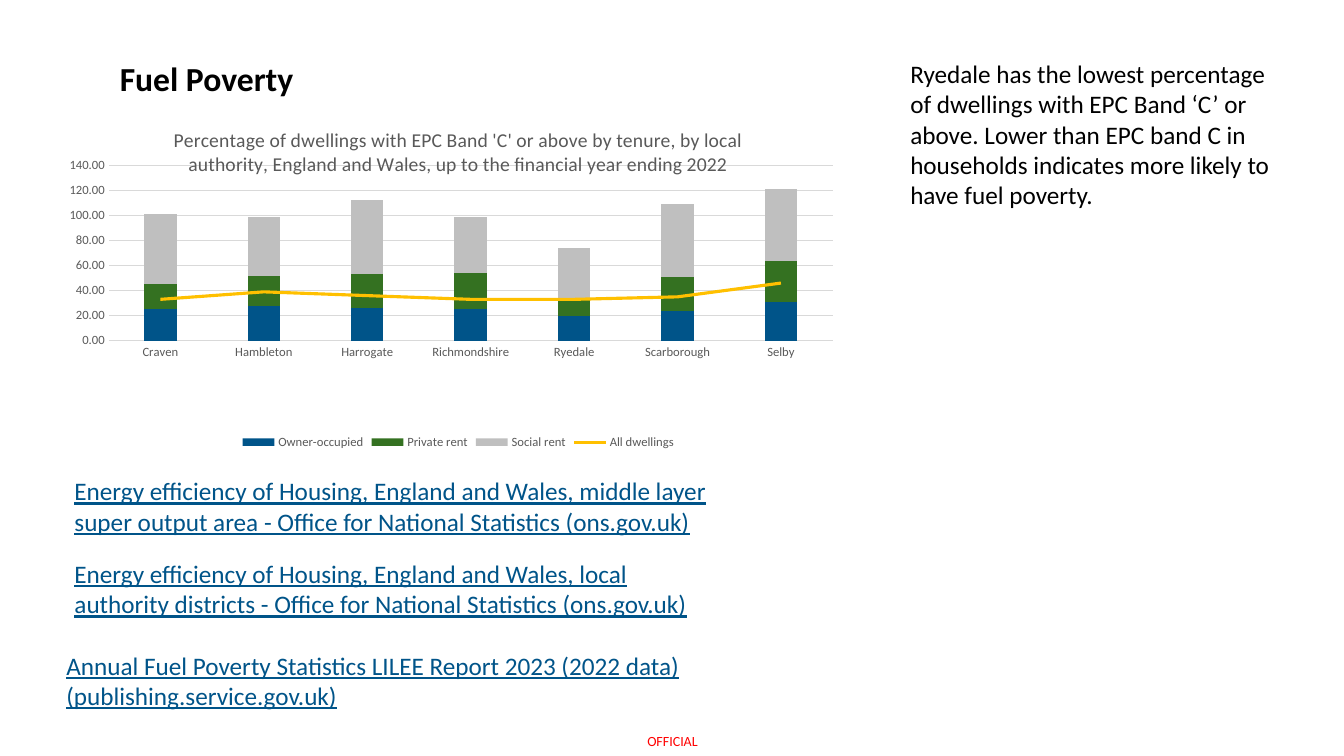
from dataclasses import dataclass

from pptx import Presentation
from pptx.chart.data import CategoryChartData
from pptx.dml.color import RGBColor
from pptx.enum.chart import XL_CHART_TYPE as ChartType, XL_LEGEND_POSITION as LegendPosition
from pptx.enum.chart import XL_MARKER_STYLE as MarkerStyle, XL_TICK_MARK as TickMark
from pptx.enum.text import MSO_ANCHOR as Anchor, PP_ALIGN as Align
from pptx.oxml import parse_xml
from pptx.oxml.ns import nsdecls, qn
from pptx.util import Inches, Pt


@dataclass(frozen=True)
class Theme:
    font: str = "Calibri"
    ink: str = "000000"
    link: str = "005489"
    marking: str = "FF0000"
    label: str = "595959"
    grid: str = "D9D9D9"
    bars: tuple = ("005489", "347121", "BFBFBF")
    average: str = "FFC000"
    heading_size: float = 24
    body_size: float = 18
    chart_title_size: float = 14
    marking_size: float = 10
    label_size: float = 9


def style_font(font, theme, size, color, bold=False, underline=False):
    font.name = theme.font
    font.size = Pt(size)
    font.bold = bold
    font.underline = underline
    font.color.rgb = RGBColor.from_string(color)


def write_text(frame, text, theme, size, color, align=Align.LEFT, **font_format):
    paragraph = frame.paragraphs[0]
    paragraph.alignment = align
    run = paragraph.add_run()
    run.text = text
    style_font(run.font, theme, size, color, **font_format)


def style_line(line, color, width):
    line.color.rgb = RGBColor.from_string(color)
    line.width = Pt(width)


class SlideBuilder:
    def __init__(self, slide, theme):
        self.slide = slide
        self.theme = theme

    def text(self, text, left, top, width, height, size, color,
             margin=None, anchor=Anchor.TOP, **text_format):
        box = self.slide.shapes.add_textbox(
            Inches(left), Inches(top), Inches(width), Inches(height))
        frame = box.text_frame
        frame.word_wrap = True
        frame.vertical_anchor = anchor
        if margin is not None:
            frame.margin_left = frame.margin_right = Inches(margin)
            frame.margin_top = frame.margin_bottom = Inches(margin)
        write_text(frame, text, self.theme, size, color, **text_format)

    def tenure_chart(self, title, areas, tenures, left, top, width, height, plot_layout):
        theme = self.theme
        data = CategoryChartData(number_format="0.00")
        data.categories = areas
        for tenure, percentages in tenures.items():
            data.add_series(tenure, percentages)
        chart = self.slide.shapes.add_chart(
            ChartType.COLUMN_STACKED, Inches(left), Inches(top),
            Inches(width), Inches(height), data).chart
        style_font(chart.font, theme, theme.marking_size, theme.ink)

        self.move_last_series_to_line(chart)
        self.place_plot(chart, *plot_layout)
        columns, average = chart.plots
        columns.gap_width = 219
        columns.overlap = 100
        columns.vary_by_categories = False
        for tenure, color in zip(columns.series, theme.bars):
            tenure.format.fill.solid()
            tenure.format.fill.fore_color.rgb = RGBColor.from_string(color)
        all_dwellings = average.series[0]
        all_dwellings.smooth = False
        all_dwellings.marker.style = MarkerStyle.NONE
        style_line(all_dwellings.format.line, theme.average, 2.25)

        chart.has_title = True
        chart.chart_title.include_in_layout = False
        write_text(chart.chart_title.text_frame, title, theme,
                   theme.chart_title_size, theme.label, align=Align.CENTER)
        chart.has_legend = True
        chart.legend.position = LegendPosition.BOTTOM
        chart.legend.include_in_layout = False
        style_font(chart.legend.font, theme, theme.label_size, theme.label)

        for axis in (chart.category_axis, chart.value_axis):
            axis.major_tick_mark = axis.minor_tick_mark = TickMark.NONE
            style_font(axis.tick_labels.font, theme, theme.label_size, theme.label)
        style_line(chart.category_axis.format.line, theme.grid, 0.75)
        percentage_axis = chart.value_axis
        percentage_axis.minimum_scale = 0
        percentage_axis.maximum_scale = 140
        percentage_axis.major_unit = 20
        percentage_axis.tick_labels.number_format = "0.00"
        percentage_axis.tick_labels.number_format_is_linked = False
        percentage_axis.format.line.fill.background()
        style_line(percentage_axis.major_gridlines.format.line, theme.grid, 0.75)

    def move_last_series_to_line(self, chart):
        columns = next(chart.element.iter(qn("c:barChart")))
        average = columns.findall(qn("c:ser"))[-1]
        for invert in average.findall(qn("c:invertIfNegative")):
            average.remove(invert)
        line_plot = parse_xml(
            f'<c:lineChart {nsdecls("c")}><c:grouping val="standard"/>'
            '<c:varyColors val="0"/><c:marker val="1"/></c:lineChart>')
        line_plot.insert(2, average)
        for axis_id in columns.findall(qn("c:axId")):
            line_plot.append(parse_xml(
                f'<c:axId {nsdecls("c")} val="{axis_id.get("val")}"/>'))
        columns.addnext(line_plot)

    def place_plot(self, chart, left, top, width, height):
        plot_area = next(chart.element.iter(qn("c:plotArea")))
        for layout in plot_area.findall(qn("c:layout")):
            plot_area.remove(layout)
        plot_area.insert(0, parse_xml(
            f'<c:layout {nsdecls("c")}><c:manualLayout><c:layoutTarget val="inner"/>'
            '<c:xMode val="edge"/><c:yMode val="edge"/>'
            f'<c:x val="{left}"/><c:y val="{top}"/><c:w val="{width}"/><c:h val="{height}"/>'
            '</c:manualLayout></c:layout>'))


AREAS = ("Craven", "Hambleton", "Harrogate", "Richmondshire", "Ryedale", "Scarborough", "Selby")
TENURES = {
    "Owner-occupied": (25, 28, 26, 25, 20, 24, 31),
    "Private rent": (20, 24, 27, 29, 13, 27, 33),
    "Social rent": (56, 47, 59, 45, 41, 58, 57),
    "All dwellings": (33, 39, 36, 33, 33, 35, 46),
}
SOURCES = (
    (0.64, 4.67, "Energy efficiency of Housing, England and Wales, middle layer super output area "
                 "- Office for National Statistics (ons.gov.uk)"),
    (0.64, 5.49, "Energy efficiency of Housing, England and Wales, local authority districts "
                 "- Office for National Statistics (ons.gov.uk)"),
    (0.56, 6.4, "Annual Fuel Poverty Statistics LILEE Report 2023 (2022 data) "
                "(publishing.service.gov.uk)"),
)


def main():
    deck = Presentation()
    deck.slide_width, deck.slide_height = Inches(13.33), Inches(7.5)
    theme = Theme()
    builder = SlideBuilder(deck.slides.add_slide(deck.slide_layouts[6]), theme)

    builder.text("OFFICIAL", 6.27, 7.21, 0.8, 0.29, theme.marking_size, theme.marking,
                 margin=0, anchor=Anchor.MIDDLE, align=Align.CENTER)
    builder.text("Fuel Poverty", 1.09, 0.53, 4.43, 0.5, theme.heading_size, theme.ink, bold=True)
    builder.tenure_chart(
        "Percentage of dwellings with EPC Band 'C' or above by tenure, by local authority, "
        "England and Wales, up to the financial year ending 2022",
        AREAS, TENURES, 0.56, 1.1, 7.97, 3.4, plot_layout=(0.065, 0.159, 0.901, 0.512))
    for left, top, source in SOURCES:
        builder.text(source, left, top, 6.67, 0.71, theme.body_size, theme.link, underline=True)
    builder.text("Ryedale has the lowest percentage of dwellings with EPC Band ‘C’ or above. "
                 "Lower than EPC band C in households indicates more likely to have fuel poverty.",
                 8.93, 0.53, 3.84, 1.62, theme.body_size, theme.ink)
    deck.save("out.pptx")


if __name__ == "__main__":
    main()
